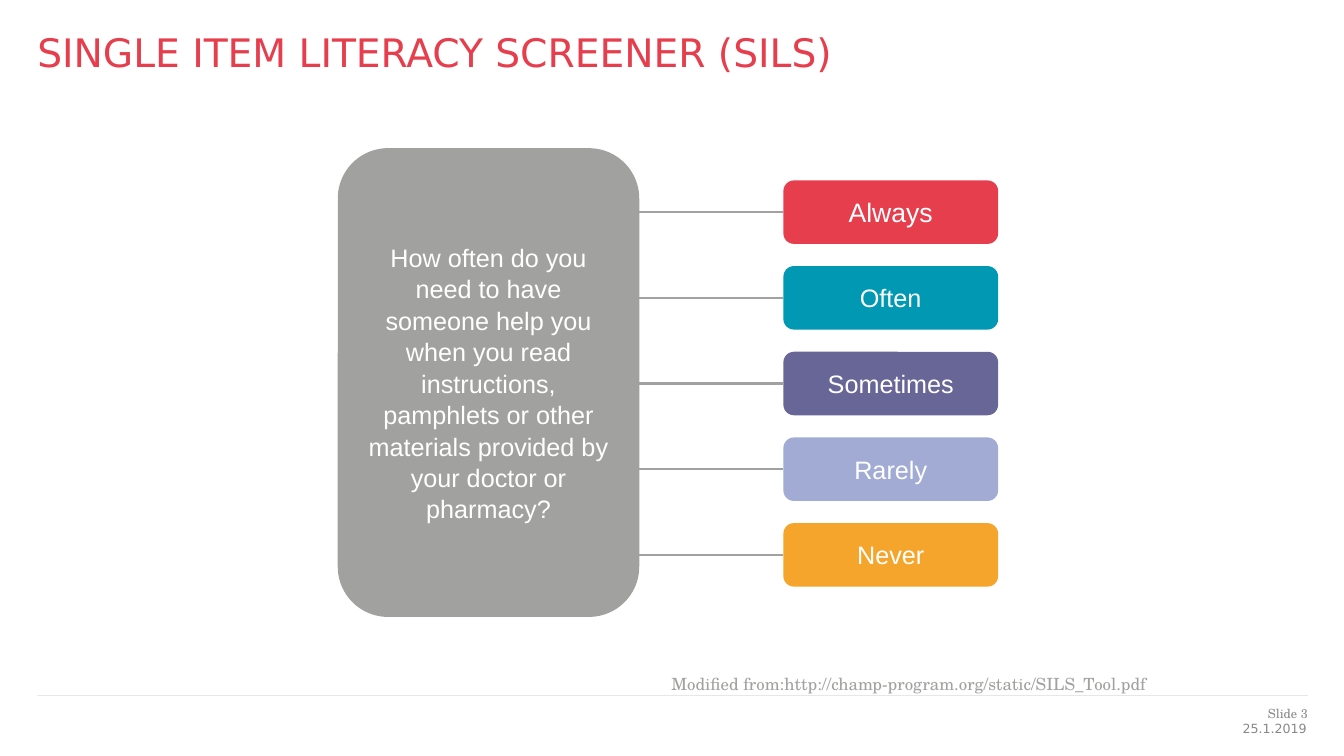
"""Build the Single Item Literacy Screener slide."""
from lxml import etree
from pptx import Presentation
from pptx.dml.color import RGBColor
from pptx.enum.shapes import MSO_CONNECTOR, MSO_SHAPE
from pptx.enum.text import MSO_ANCHOR, PP_ALIGN
from pptx.oxml.ns import qn
from pptx.util import Inches, Pt


def set_text(sp, text, size, font, color, align, anchor, inset=0.0, wrap=True):
    tf = sp.text_frame
    tf.word_wrap = wrap
    tf.vertical_anchor = anchor
    tf.margin_left = tf.margin_right = Inches(inset)
    tf.margin_top = tf.margin_bottom = Inches(inset / 2)
    p = tf.paragraphs[0]
    p.text = text
    p.alignment = align
    p.font.size = Pt(size)
    p.font.name = font
    p.font.color.rgb = RGBColor.from_string(color)
    return p


def add_line(x1, y1, x2, y2, color, width):
    line = s.shapes.add_connector(MSO_CONNECTOR.STRAIGHT, Inches(x1), Inches(y1),
                                  Inches(x2), Inches(y2))
    line.line.color.rgb = RGBColor.from_string(color)
    line.line.width = Pt(width)
    etree.SubElement(line._element.spPr, qn("a:effectLst"))
    return line


prs = Presentation()
prs.slide_width, prs.slide_height = Inches(13.33), Inches(7.5)
s = prs.slides.add_slide(prs.slide_layouts[6])

rule = add_line(0.37, 6.9, 12.97, 6.9, "262626", 0.25)
rule_color = rule._element.spPr.find(".//" + qn("a:srgbClr"))
etree.SubElement(rule_color, qn("a:alpha"), val="31000")

labels = [
    (0.37, 0.28, 12.6, 0.94, "SINGLE ITEM LITERACY SCREENER (SILS)", 28, "DejaVu Sans",
     "E63E4D", PP_ALIGN.LEFT, 0, True),
    (11.11, 7.15, 1.85, 0.2, "25.1.2019", 9, "DejaVu Sans",
     "898989", PP_ALIGN.RIGHT, 0, True),
    (11.48, 7, 1.49, 0.14, "Slide 3", 9, "TeX Gyre Schola",
     "898989", PP_ALIGN.RIGHT, 0, True),
    (6.56, 6.63, 5, 0.5, "Modified from:http://champ-program.org/static/SILS_Tool.pdf", 12,
     "TeX Gyre Schola", "A1A19F", PP_ALIGN.LEFT, 0.1, False),
]
for x, y, w, h, text, size, font, color, align, inset, wrap in labels:
    sp = s.shapes.add_textbox(Inches(x), Inches(y), Inches(w), Inches(h))
    set_text(sp, text, size, font, color, align, MSO_ANCHOR.TOP, inset, wrap)

question = ("How often do you need to have someone help you when you read instructions, "
            "pamphlets or other materials provided by your doctor or pharmacy?")
answers = [("Always", "E63E4D", 19), ("Often", "0098B3", 18), ("Sometimes", "676696", 18),
           ("Rarely", "A1ABD3", 18), ("Never", "F5A52B", 18)]
left, top, width, height, pitch = 7.77, 1.79, 2.13, 0.63, 0.85

boxes = [(3.35, 1.47, 2.99, 4.65, question, "A1A19F", 18)]
for i, (text, color, size) in enumerate(answers):
    boxes.append((left, top + i * pitch, width, height, text, color, size))

for x, y, w, h, text, color, size in boxes:
    sp = s.shapes.add_shape(MSO_SHAPE.ROUNDED_RECTANGLE, Inches(x), Inches(y),
                            Inches(w), Inches(h))
    sp.shadow.inherit = False
    sp.fill.solid()
    sp.fill.fore_color.rgb = RGBColor.from_string(color)
    sp.line.fill.background()
    p = set_text(sp, text, size, "Arial", "FFFFFF", PP_ALIGN.CENTER, MSO_ANCHOR.MIDDLE, 0.1)
    if text == question:
        p.line_spacing = 1.04
    else:
        middle = y + h / 2
        link = add_line(6.18, middle, left, middle, "A1A19F", 1.5)
        link.end_connect(sp, 1)

prs.save("out.pptx")
